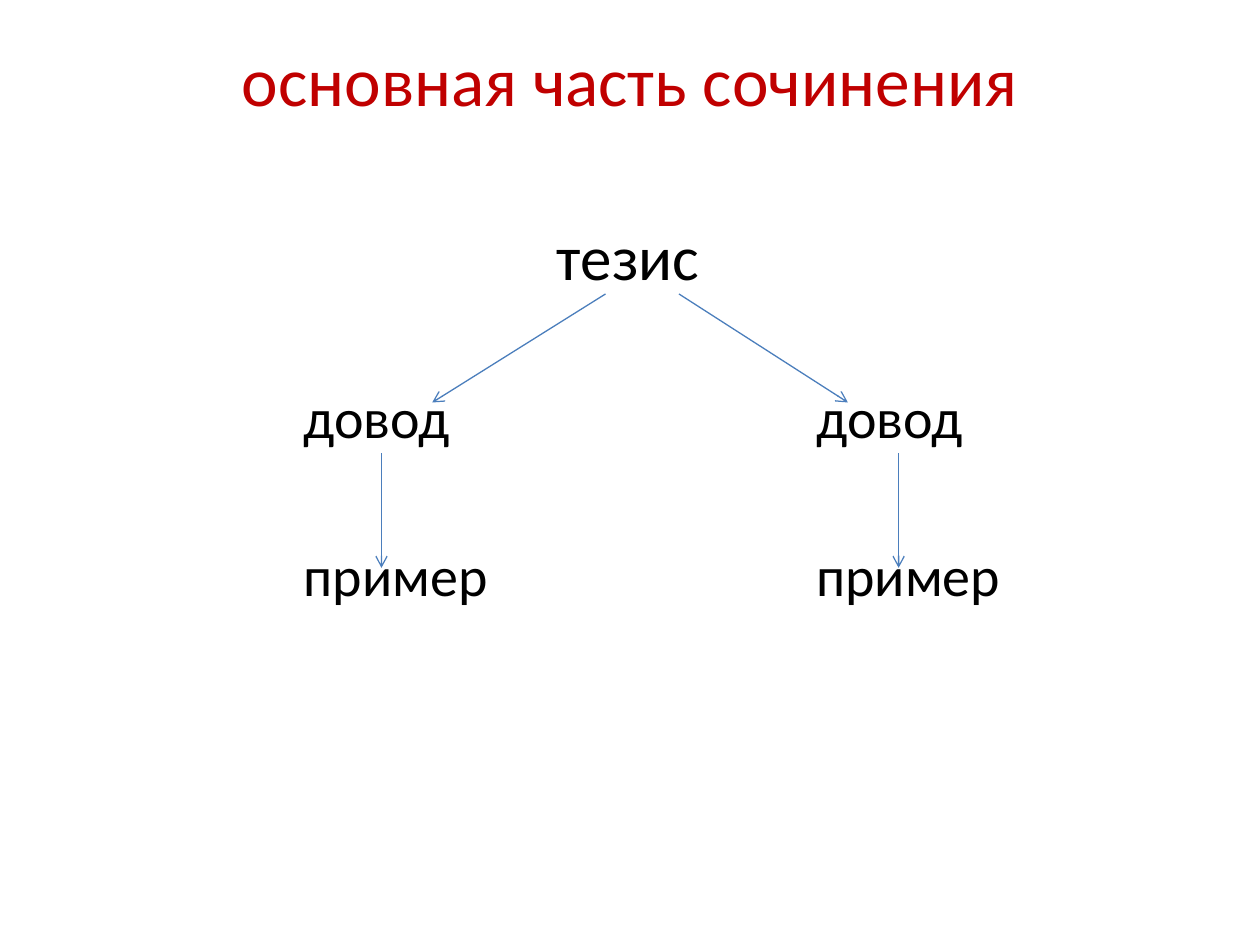
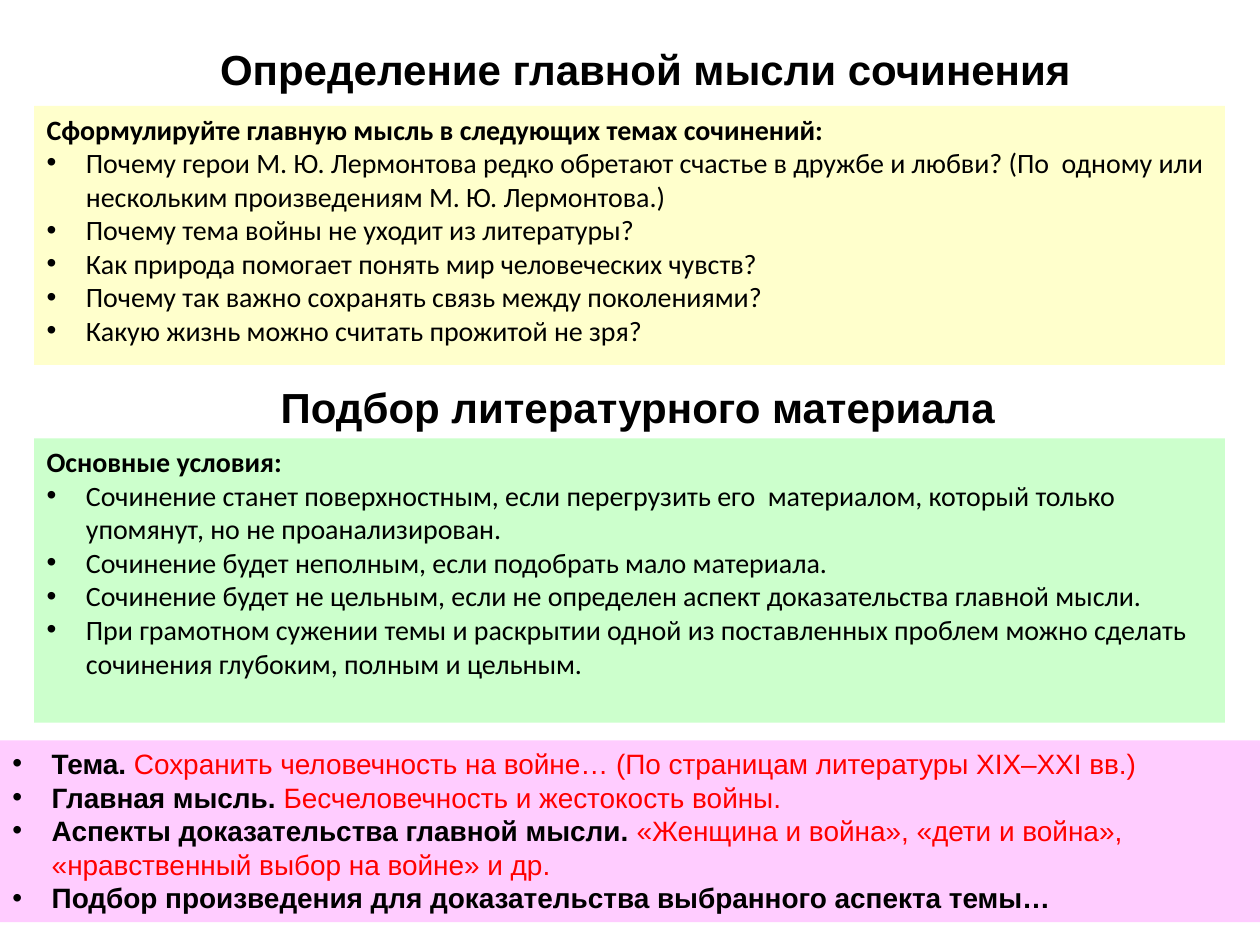
"""Builds two slides on the main part of an essay and its main idea."""
from lxml import etree
from pptx import Presentation
from pptx.dml.color import RGBColor
from pptx.enum.shapes import MSO_CONNECTOR, MSO_SHAPE
from pptx.enum.text import MSO_ANCHOR, PP_ALIGN
from pptx.oxml.ns import qn
from pptx.util import Pt

STRAIGHT = MSO_CONNECTOR.STRAIGHT
RECTANGLE = MSO_SHAPE.RECTANGLE
TOP, MIDDLE = MSO_ANCHOR.TOP, MSO_ANCHOR.MIDDLE
LEFT, CENTER = PP_ALIGN.LEFT, PP_ALIGN.CENTER

COLORS = {
    "text": "000000", "title": "C00000", "accent": "FF0000", "arrow": "4B7EBC",
    "yellow": "FFFFCC", "green": "CCFFCC", "pink": "FFCCFF",
}
BODY_FONT, HEADING_FONT = "Calibri", "Arial"
BULLET_INDENT = 22.5


def rgb(name):
    return RGBColor.from_string(COLORS[name])


class Deck:
    def __init__(self):
        self.presentation = Presentation()
        self.presentation.slide_width = Pt(720)
        self.presentation.slide_height = Pt(540)
        self.slide = None

    def add_slide(self):
        layout = self.presentation.slide_layouts[6]
        self.slide = self.presentation.slides.add_slide(layout)

    def style(self, paragraph, size, font=BODY_FONT, color="text", bold=False, align=LEFT):
        paragraph.alignment = align
        paragraph.font.size = Pt(size)
        paragraph.font.name = font
        paragraph.font.bold = bold
        paragraph.font.color.rgb = rgb(color)

    def label(self, text, left, top, width, height, size, **style):
        box = self.slide.shapes.add_textbox(Pt(left), Pt(top), Pt(width), Pt(height))
        frame = box.text_frame
        frame.word_wrap = True
        frame.vertical_anchor = MIDDLE
        frame.margin_left = frame.margin_right = 0
        frame.margin_top = frame.margin_bottom = 0
        paragraph = frame.paragraphs[0]
        paragraph.text = text
        self.style(paragraph, size, **style)

    def heading(self, text, left, top, width):
        self.label(text, left, top, width, 37, 24, font=HEADING_FONT, bold=True, align=CENTER)

    def arrow(self, start, end):
        points = [Pt(value) for value in (*start, *end)]
        connector = self.slide.shapes.add_connector(STRAIGHT, *points)
        connector.line.color.rgb = rgb("arrow")
        connector.line.width = Pt(0.75)
        line = connector.line._get_or_add_ln()
        etree.SubElement(line, qn("a:tailEnd"), type="arrow")
        etree.SubElement(connector._element.spPr, qn("a:effectLst"))

    def bullet(self, paragraph):
        properties = paragraph._p.get_or_add_pPr()
        properties.set("marL", str(Pt(BULLET_INDENT)))
        properties.set("indent", str(-Pt(BULLET_INDENT)))
        etree.SubElement(properties, qn("a:buFont"), typeface="Arial")
        etree.SubElement(properties, qn("a:buChar"), char="•")

    def panel(self, left, top, width, height, fill):
        shape = self.slide.shapes.add_shape(RECTANGLE, Pt(left), Pt(top), Pt(width), Pt(height))
        shape.shadow.inherit = False
        shape.fill.solid()
        shape.fill.fore_color.rgb = rgb(fill)
        shape.line.fill.background()
        shape.text_frame.word_wrap = True
        shape.text_frame.vertical_anchor = TOP
        return shape.text_frame

    def list_panel(self, top, height, fill, lead, items):
        frame = self.panel(19.5, top, 680.5, height, fill)
        frame.text = "\n".join([lead, *items])
        for index, paragraph in enumerate(frame.paragraphs):
            self.style(paragraph, 16, bold=index == 0)
            if index:
                self.bullet(paragraph)

    def term_panel(self, top, height, fill, terms):
        frame = self.panel(0, top, 720, height, fill)
        for index, (term, example) in enumerate(terms):
            paragraph = frame.add_paragraph() if index else frame.paragraphs[0]
            self.style(paragraph, 16, font=HEADING_FONT, bold=True)
            paragraph.line_spacing = Pt(19.2)
            self.bullet(paragraph)
            paragraph.add_run().text = term
            if example:
                run = paragraph.add_run()
                run.text = example
                run.font.bold = False
                run.font.color.rgb = rgb("accent")


def build_scheme(deck):
    deck.add_slide()
    deck.label("основная часть сочинения", 36, 20, 648, 50, 39.6, color="title", align=CENTER)
    deck.label("тезис", 289, 124, 140, 44, 36, align=CENTER)
    branches = ((173.5, 218, (346, 168), (247, 230)), (466.5, 513.5, (388, 168), (484.5, 230)))
    for left, arrow_x, start, end in branches:
        deck.label("довод", left, 218.5, 140, 39, 32)
        deck.label("пример", left, 308.5, 140, 39, 32)
        deck.arrow(start, end)
        deck.arrow((arrow_x, 259), (arrow_x, 324.5))


def build_main_idea(deck):
    deck.add_slide()
    deck.heading("Определение главной мысли сочинения", 116, 21, 505.5)
    deck.list_panel(60.5, 148, "yellow", "Сформулируйте главную мысль в следующих темах сочинений:", [
        "Почему герои М. Ю. Лермонтова редко обретают счастье в дружбе и любви? "
        "(По  одному или нескольким произведениям М. Ю. Лермонтова.)",
        "Почему тема войны не уходит из литературы?",
        "Как природа помогает понять мир человеческих чувств?",
        "Почему так важно сохранять связь между поколениями?",
        "Какую жизнь можно считать прожитой не зря?",
    ])
    deck.heading("Подбор литературного материала", 151, 214, 427)
    deck.list_panel(250.5, 162.5, "green", "Основные условия:", [
        "Сочинение станет поверхностным, если перегрузить его  материалом, "
        "который только упомянут, но не проанализирован.",
        "Сочинение будет неполным, если подобрать мало материала.",
        "Сочинение будет не цельным, если не определен аспект доказательства главной мысли.",
        "При грамотном сужении темы и раскрытии одной из поставленных проблем "
        "можно сделать сочинения глубоким, полным и цельным.",
    ])
    deck.term_panel(423, 104, "pink", [
        ("Тема. ", "Сохранить человечность на войне… (По страницам литературы XIX–XXI вв.)"),
        ("Главная мысль. ", "Бесчеловечность и жестокость войны."),
        ("Аспекты доказательства главной мысли. ",
         "«Женщина и война», «дети и война», «нравственный выбор на войне» и др."),
        ("Подбор произведения для доказательства выбранного аспекта темы…", ""),
    ])


def main():
    deck = Deck()
    build_scheme(deck)
    build_main_idea(deck)
    deck.presentation.save("out.pptx")


if __name__ == "__main__":
    main()
